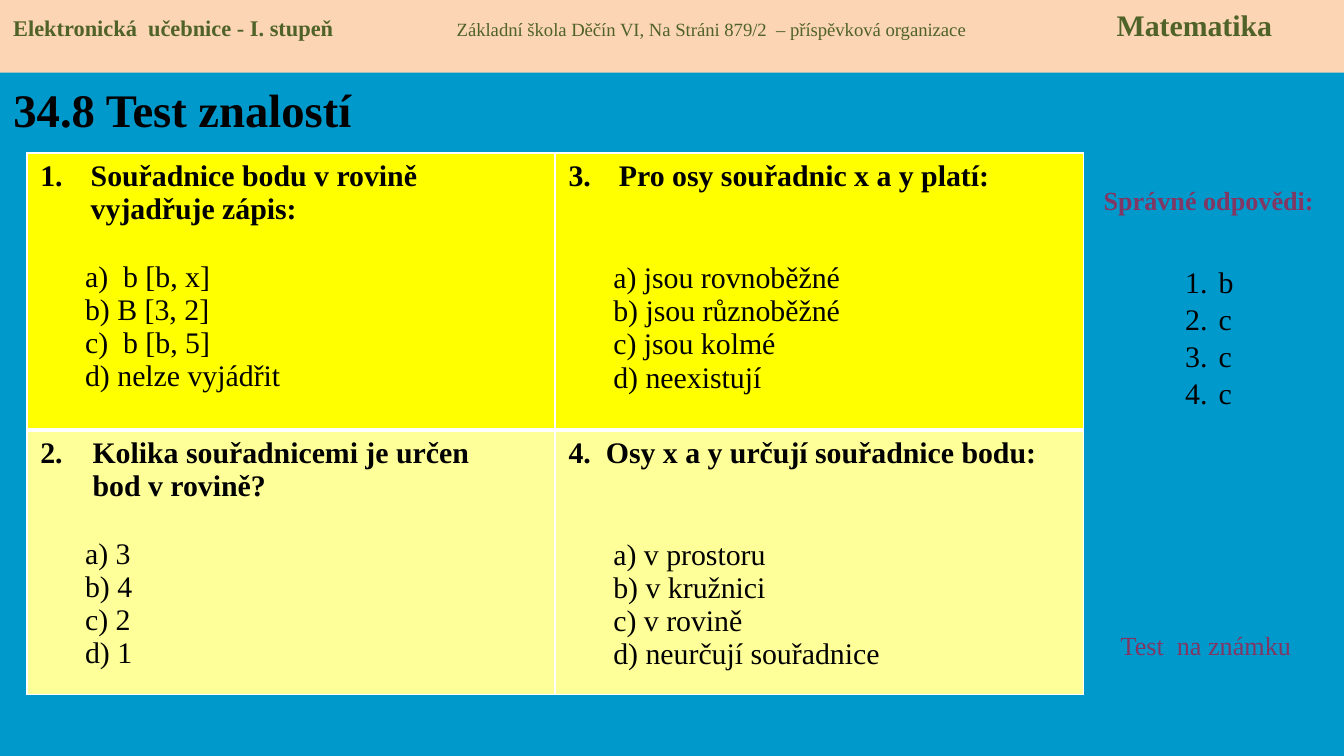
"""Build a maths quiz slide with a question table and its answer key."""
import pptx
import pptx.dml.color
import pptx.enum.shapes
import pptx.enum.text
import pptx.oxml.ns
import pptx.util
from lxml import etree

Pt = pptx.util.Pt
ALIGN = pptx.enum.text.PP_ALIGN
ANCHOR = pptx.enum.text.MSO_ANCHOR
FACE = "Times New Roman"
HUES = {
    "page": "0099CC", "band": "FCD5B5", "green": "4F6228", "ink": "000000",
    "plum": "813763", "top": "FFFF00", "low": "FFFF99", "edge": "FFFFFF",
}
TESTS = [
    [
        (1, 27, 18.4, "Souřadnice bodu v rovině vyjadřuje zápis:",
         ["a)  b [b, x]", "b) B [3, 2]", "c)  b [b, 5]", "d) nelze vyjádřit"]),
        (3, 27, 36.8, "Pro osy souřadnic x a y platí:",
         ["a) jsou rovnoběžné", "b) jsou různoběžné", "c) jsou kolmé", "d) neexistují"]),
    ],
    [
        (2, 28, 18.4, "Kolika souřadnicemi je určen\vbod v rovině?",
         ["a) 3", "b) 4", "c) 2", "d) 1"]),
        (4, 20, 36.8, "Osy x a y určují souřadnice bodu:",
         ["a) v prostoru", "b) v kružnici", "c) v rovině", "d) neurčují souřadnice"]),
    ],
]


def tint(hue):
    """Return the named colour."""
    return pptx.dml.color.RGBColor.from_string(HUES[hue])


def paint(fill, hue):
    """Make a fill solid in the named colour."""
    fill.solid()
    fill.fore_color.rgb = tint(hue)


def apply(item, **vals):
    """Set each given attribute on an item."""
    for key, val in vals.items():
        setattr(item, key, val)


def style(font, size, hue="ink", bold=False):
    """Format a font."""
    apply(font, name=FACE, size=Pt(size), bold=bold)
    font.color.rgb = tint(hue)


def node(base, tag, **vals):
    """Append a drawing element and return it."""
    vals = {key: str(val) for key, val in vals.items()}
    return etree.SubElement(base, pptx.oxml.ns.qn("a:" + tag), vals)


def dent(par, left, first=0):
    """Set the left and first-line indents of a paragraph."""
    props = par._p.get_or_add_pPr()
    props.set("marL", str(Pt(left)))
    props.set("indent", str(Pt(first)))
    return props


def number(par, left, start=1):
    """Number a paragraph with a hanging indent."""
    props = dent(par, left, -left)
    node(props, "buFont", typeface="+mj-lt")
    node(props, "buAutoNum", type="arabicPeriod", startAt=start)


def write(frame, lines, size, hue="ink", bold=False):
    """Fill a text frame with equally styled paragraphs."""
    frame.text = "\n".join(lines)
    for par in frame.paragraphs:
        for run in par.runs:
            style(run.font, size, hue, bold)
    return frame.paragraphs


def label(slide, box, lines, size, hue="ink", bold=False):
    """Add a wrapping text box and return its frame."""
    frame = slide.shapes.add_textbox(*map(Pt, box)).text_frame
    frame.word_wrap = True
    write(frame, lines, size, hue, bold)
    return frame


def banner(slide):
    """Add the band with three texts set on tab stops."""
    rect = pptx.enum.shapes.MSO_SHAPE.RECTANGLE
    band = slide.shapes.add_shape(rect, 0, 0, Pt(720), Pt(39))
    band.shadow.inherit = False
    paint(band.fill, "band")
    band.line.fill.background()
    frame = band.text_frame
    apply(frame, vertical_anchor=ANCHOR.TOP, word_wrap=True)
    par = frame.paragraphs[0]
    par.alignment = ALIGN.LEFT
    stops = node(par._p.get_or_add_pPr(), "tabLst")
    for pos in (237.6, 591.2):
        node(stops, "tab", pos=Pt(pos), algn="l")
    school = "Základní škola Děčín VI, Na Stráni 879/2  – příspěvková organizace"
    for text, size, bold in (
        ("Elektronická  učebnice - I. stupeň", 12, True),
        ("\t" + school, 10, False),
        ("\tMatematika", 16, True),
    ):
        run = par.add_run()
        run.text = text
        style(run.font, size, "green", bold)


def head(slide):
    """Place and format the title."""
    title = slide.shapes.title
    apply(title, left=Pt(0), top=Pt(39.6), width=Pt(198), height=Pt(37.4))
    frame = title.text_frame
    apply(frame, word_wrap=False, vertical_anchor=ANCHOR.MIDDLE)
    write(frame, ["34.8 Test znalostí"], 25, bold=True)[0].alignment = ALIGN.LEFT


def border(cell, **sides):
    """Draw the cell borders at the given widths."""
    props = cell._tc.get_or_add_tcPr()
    for side, width in sides.items():
        line = node(props, "ln" + side, w=Pt(width))
        node(node(line, "solidFill"), "srgbClr", val=HUES["edge"])


def quiz(cell, start, left, gap, ask, picks):
    """Write one numbered question and its choices."""
    first, *rest = write(cell.text_frame, [ask] + picks, 16)
    cell.text_frame.word_wrap = True
    number(first, left, start)
    for run in first.runs:
        run.font.bold = True
    for par in rest:
        dent(par, 24)
    rest[0].space_before = Pt(gap)


def grid(slide):
    """Add the table of four questions."""
    box = map(Pt, (14.4, 82.1, 566, 290))
    table = slide.shapes.add_table(2, 2, *box).table
    for col in table.columns:
        col.width = Pt(283)
    for row, high in zip(table.rows, (148.3, 141.7)):
        row.height = Pt(high)
    looks = (("top", {"T": 1, "B": 3}), ("low", {"T": 3, "B": 1}))
    for row, tests, (hue, ends) in zip(table.rows, TESTS, looks):
        for cell, test in zip(row.cells, tests):
            border(cell, L=1, R=1, **ends)
            paint(cell.fill, hue)
            quiz(cell, *test)


def key(slide):
    """Add the answer key and the closing note."""
    frame = label(slide, (579.6, 95, 136, 24.5), ["Správné odpovědi:"], 14, "plum", True)
    frame.paragraphs[0].alignment = ALIGN.CENTER
    frame = label(slide, (627.8, 118.8, 39.6, 143.3), "bccc", 16)
    frame.margin_top = Pt(22.6)
    for par in frame.paragraphs:
        number(par, 18)
        par.space_after = Pt(0.6)
    label(slide, (593.3, 333.4, 113, 24.5), ["Test  na známku"], 14, "plum")


def main():
    """Build and save the slide."""
    deck = pptx.Presentation()
    apply(deck, slide_width=Pt(720), slide_height=Pt(405))
    slide = deck.slides.add_slide(deck.slide_layouts[5])
    paint(slide.background.fill, "page")
    head(slide)
    grid(slide)
    key(slide)
    banner(slide)
    deck.save("out.pptx")


if __name__ == "__main__":
    main()
